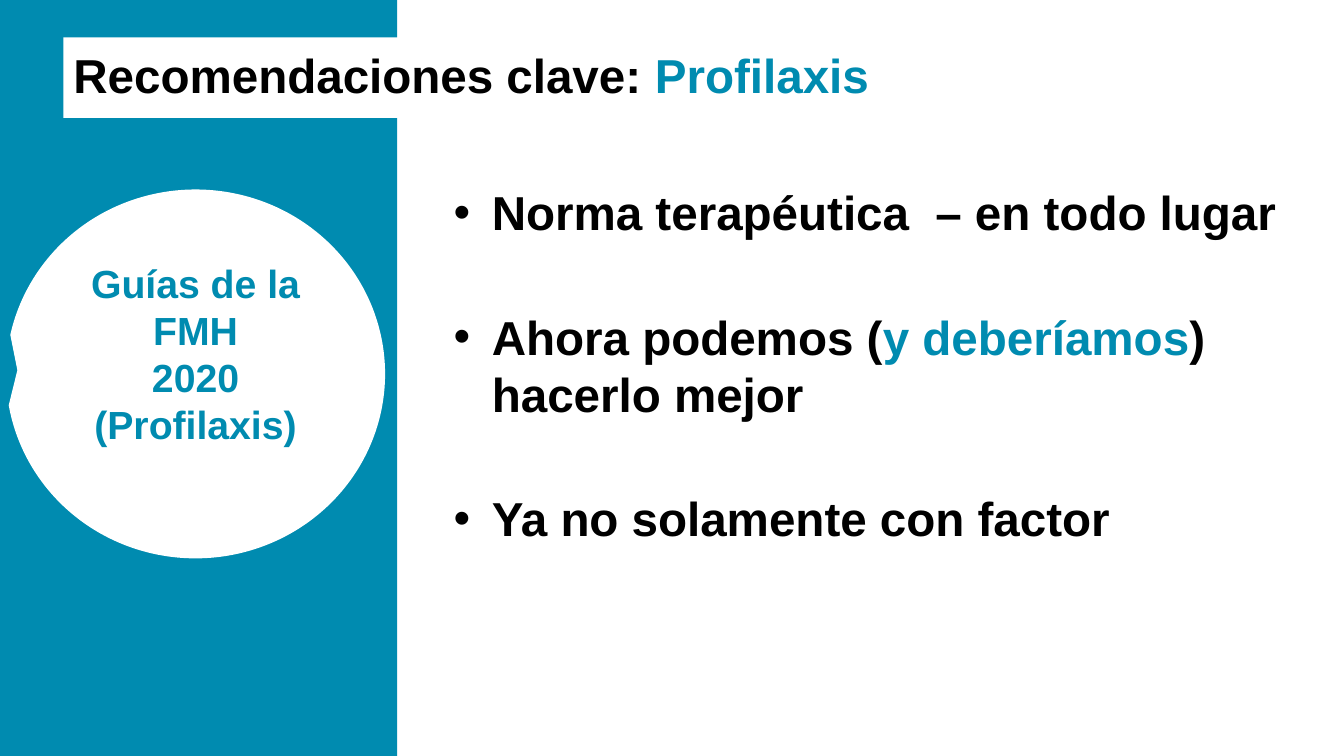
from dataclasses import dataclass

from lxml import etree
from pptx import Presentation
from pptx.dml.color import RGBColor
from pptx.enum import shapes, text
from pptx.oxml import ns
from pptx.util import Inches, Pt

TEAL, WHITE, BLACK = "008BB0", "FFFFFF", "000000"
SHAPE, ALIGN, ANCHOR = shapes.MSO_SHAPE, text.PP_ALIGN, text.MSO_ANCHOR


@dataclass
class Run:
    words: str
    color: str = BLACK


@dataclass
class Block:
    left: float
    top: float
    width: float
    height: float
    fill: str = WHITE
    kind: int = SHAPE.RECTANGLE


def paint(target, color: str) -> None:
    target.rgb = RGBColor.from_string(color)


def draw(slide, block: Block):
    size = (block.left, block.top, block.width, block.height)
    shape = slide.shapes.add_shape(block.kind, *map(Inches, size))
    shape.shadow.inherit = False
    shape.fill.solid()
    paint(shape.fill.fore_color, block.fill)
    shape.line.fill.background()
    return shape


def write(shape, lines: list[list[Run]], size: float, align, anchor) -> list:
    frame = shape.text_frame
    frame.word_wrap = True
    frame.vertical_anchor = anchor
    for i, line in enumerate(lines):
        para = frame.paragraphs[0] if i == 0 else frame.add_paragraph()
        para.alignment = align
        for part in line:
            run = para.add_run()
            run.text = part.words
            run.font.name, run.font.size, run.font.bold = "Arial", Pt(size), True
            paint(run.font.color, part.color)
    return list(frame.paragraphs)


def bullet(para) -> None:
    props = para._p.get_or_add_pPr()
    props.set("marL", str(Inches(0.38)))
    props.set("indent", str(-Inches(0.38)))
    font = etree.SubElement(props, ns.qn("a:buFont"))
    font.set("typeface", "Arial")
    mark = etree.SubElement(props, ns.qn("a:buChar"))
    mark.set("char", "•")


def main() -> None:
    deck = Presentation()
    deck.slide_width, deck.slide_height = Inches(13.33), Inches(7.5)
    slide = deck.slides.add_slide(deck.slide_layouts[6])

    # Side band
    draw(slide, Block(0, 0, 3.94, 7.5, TEAL))

    # Key points
    points = [
        [Run("Norma terapéutica  – en todo lugar")],
        [Run("Ahora podemos ("), Run("y deberíamos", TEAL), Run(") hacerlo mejor")],
        [Run("Ya no solamente con factor")],
    ]
    body = draw(slide, Block(4.4, 1.77, 8.6, 4.25))
    for i, para in enumerate(write(body, points, 34, ALIGN.LEFT, ANCHOR.TOP)):
        if i:
            para.space_before = Pt(48)
        bullet(para)

    # Title bar
    title = draw(slide, Block(0.63, 0.37, 12.7, 0.8))
    heading = [[Run("Recomendaciones clave: "), Run("Profilaxis", TEAL)]]
    write(title, heading, 34, ALIGN.LEFT, ANCHOR.MIDDLE)[0].line_spacing = 0.9

    # Guideline callout, with its text raised above the middle
    callout = draw(slide, Block(0.06, 1.88, 3.76, 3.66, kind=SHAPE.OVAL_CALLOUT))
    callout.adjustments[0], callout.adjustments[1] = -0.47, -0.01
    callout.text_frame.margin_bottom = Inches(0.45)
    label = [[Run(words, TEAL)] for words in ("Guías de la FMH", "2020", "(Profilaxis)")]
    write(callout, label, 28, ALIGN.CENTER, ANCHOR.MIDDLE)

    deck.save("out.pptx")


if __name__ == "__main__":
    main()
